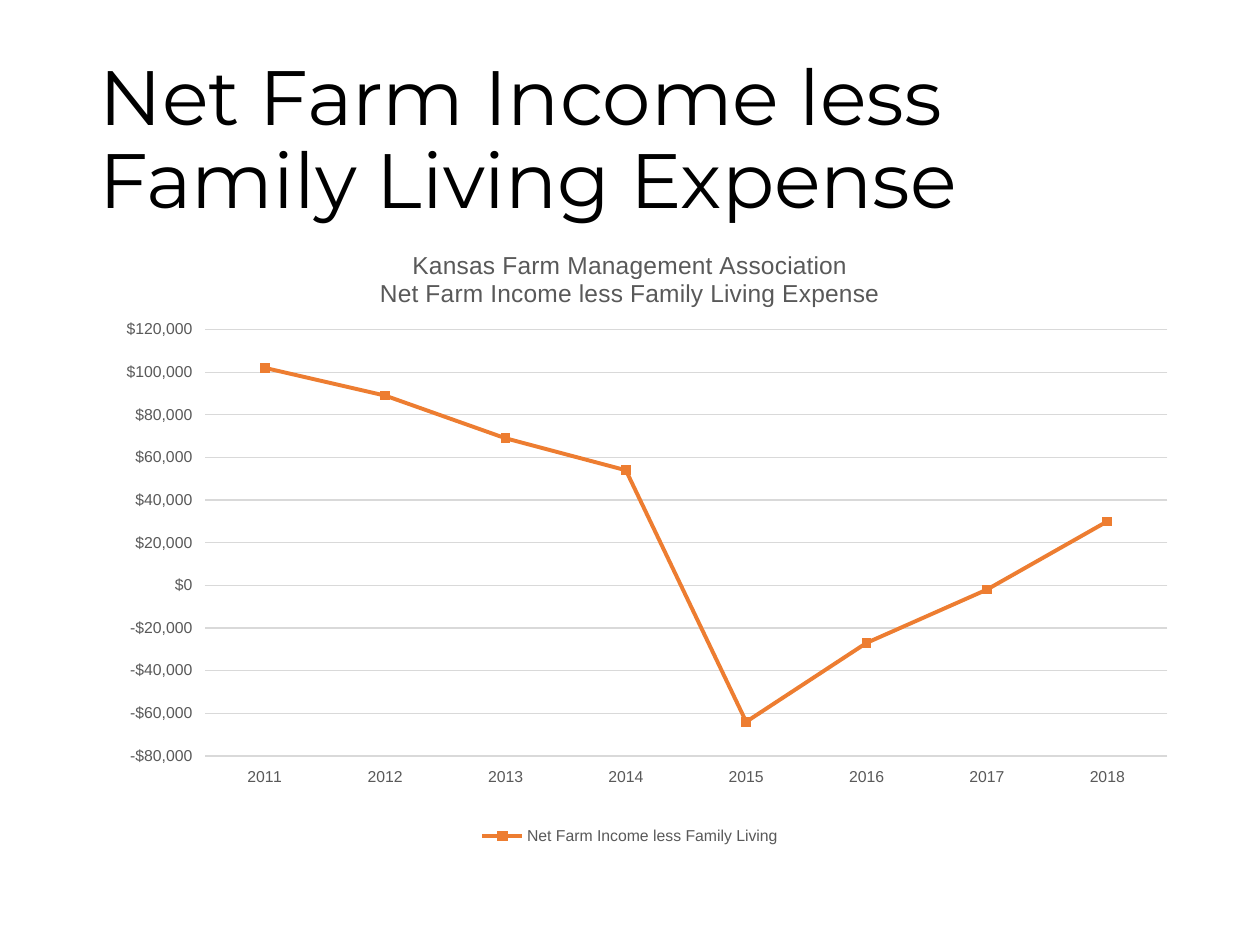
from lxml import etree
from pptx import Presentation
from pptx.chart.data import CategoryChartData
from pptx.dml.color import RGBColor
from pptx.enum.chart import XL_CHART_TYPE as CT, XL_LEGEND_POSITION as LP
from pptx.enum.chart import XL_TICK_LABEL_POSITION as TLP, XL_TICK_MARK as TM
from pptx.enum.text import MSO_ANCHOR, MSO_AUTO_SIZE, PP_ALIGN
from pptx.oxml.ns import qn
from pptx.util import Cm, Pt

BLACK = RGBColor(0x00, 0x00, 0x00)
GRAY = RGBColor(0x59, 0x59, 0x59)
GRID = RGBColor(0xD9, 0xD9, 0xD9)
ORANGE = RGBColor(0xED, 0x7D, 0x31)


def style_font(font, size=9, color=GRAY, name="Arial"):
    font.size, font.name, font.bold = Pt(size), name, False
    font.color.rgb = color


def add_text(p, text, align=PP_ALIGN.LEFT, spacing=None, **fmt):
    p.alignment = align
    p.line_spacing = spacing
    r = p.add_run()
    r.text = text
    style_font(r.font, **fmt)


prs = Presentation()
prs.slide_width, prs.slide_height = Cm(25.4), Cm(19.05)
s = prs.slides.add_slide(prs.slide_layouts[5])

# Slide title
title = s.shapes.title
title.left, title.top, title.width, title.height = Cm(1.75), Cm(1.02), Cm(21.9), Cm(3.68)
tf = title.text_frame
tf.word_wrap = True
tf.auto_size = MSO_AUTO_SIZE.NONE
tf.vertical_anchor = MSO_ANCHOR.MIDDLE
add_text(tf.paragraphs[0], "Net Farm Income less Family Living Expense",
         spacing=0.9, size=44, color=BLACK, name="Montserrat")

# Line chart
data = CategoryChartData(number_format='"$"#,##0')
data.categories = [str(year) for year in range(2011, 2019)]
data.add_series("Net Farm Income less Family Living",
                [102000, 89000, 69000, 54000, -64000, -27000, -2000, 30000])
chart = s.shapes.add_chart(CT.LINE, Cm(1.27), Cm(4.57), Cm(22.86), Cm(12.57), data).chart
style_font(chart.font, size=10, color=BLACK)

# Chart title
chart.has_title = True
tf = chart.chart_title.text_frame
add_text(tf.paragraphs[0], "Kansas Farm Management Association", align=PP_ALIGN.CENTER, size=14)
add_text(tf.add_paragraph(), "Net Farm Income less Family Living Expense",
         align=PP_ALIGN.CENTER, size=14)
chart.chart_title.include_in_layout = False

# Series and legend
series = chart.plots[0].series[0]
series.smooth = False
series.format.line.color.rgb = ORANGE
series.format.line.width = Pt(2.25)
series.marker.style = None
chart.plots[0].vary_by_categories = False
chart.has_legend = True
chart.legend.position = LP.BOTTOM
chart.legend.include_in_layout = False
style_font(chart.legend.font)

# Axes
for axis in (chart.category_axis, chart.value_axis):
    axis.major_tick_mark = axis.minor_tick_mark = TM.NONE
    axis.tick_label_position = TLP.LOW
    style_font(axis.tick_labels.font)
chart.category_axis.format.line.color.rgb = GRID
chart.category_axis.format.line.width = Pt(0.75)
va = chart.value_axis
va.minimum_scale, va.maximum_scale, va.major_unit = -80000, 120000, 20000
va.tick_labels.number_format = '"$"#,##0'
va.tick_labels.number_format_is_linked = False
va.format.line.fill.background()
va.has_major_gridlines = True
va.major_gridlines.format.line.color.rgb = GRID
va.major_gridlines.format.line.width = Pt(0.75)

# Plot area position, as fractions of the chart
area = chart.plots[0]._element.getparent()
for old in area.findall(qn("c:layout")):
    area.remove(old)
layout = etree.Element(qn("c:layout"))
area.insert(0, layout)
manual = etree.SubElement(layout, qn("c:manualLayout"))
for tag, val in (("layoutTarget", "inner"), ("xMode", "edge"), ("yMode", "edge"),
                 ("x", "0.125"), ("y", "0.165"), ("w", "0.849"), ("h", "0.684")):
    etree.SubElement(manual, qn("c:" + tag)).set("val", val)

prs.save("out.pptx")
